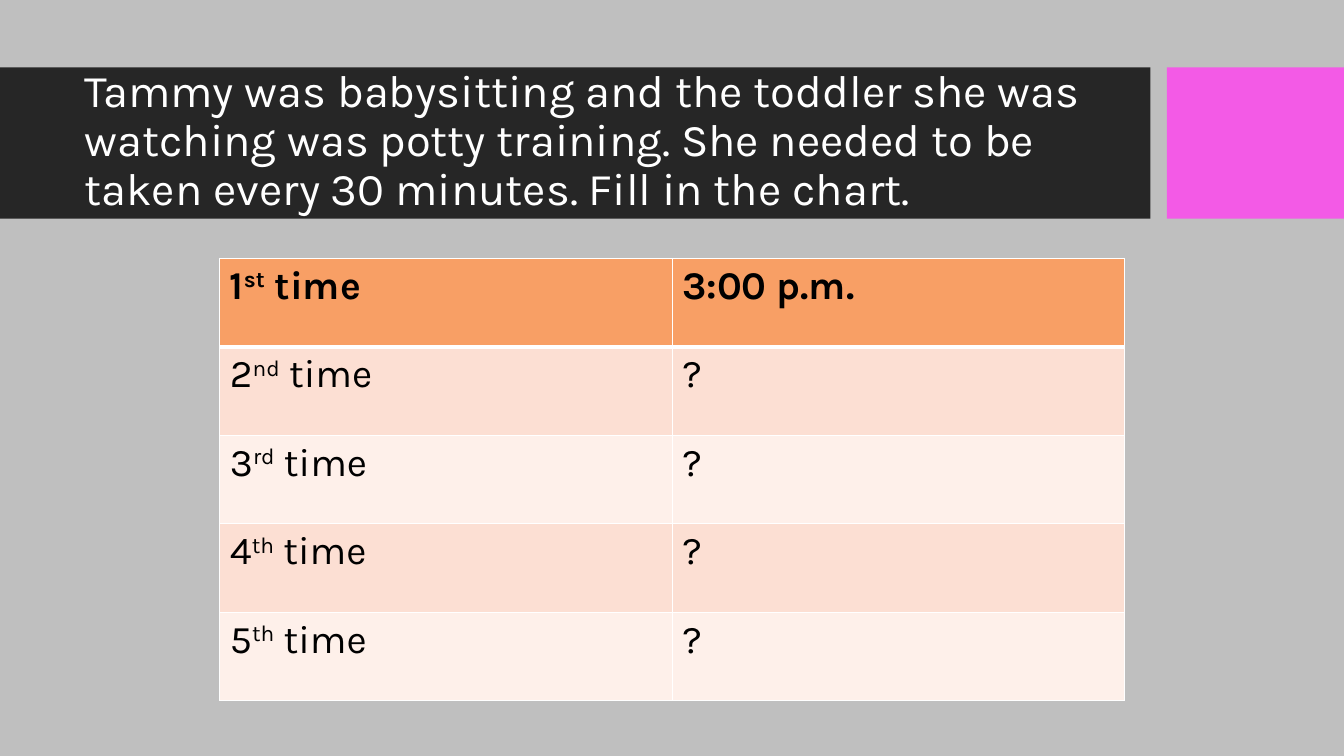
from lxml.etree import SubElement
from pptx import Presentation
from pptx.dml.color import RGBColor
from pptx.enum.shapes import MSO_SHAPE as Shape
from pptx.enum.text import MSO_ANCHOR as Anchor
from pptx.oxml.ns import qn
from pptx.util import Cm, Pt

FONT = "Karla"
COLORS = {
    "background": "BFBFBF",
    "banner": "262626",
    "accent": "F35AE6",
    "header": "F89F65",
    "dark_band": "FCDFD3",
    "light_band": "FEF0EA",
    "white": "FFFFFF",
    "black": "000000",
}
QUESTION = (
    "Tammy was babysitting and the toddler she was watching was potty training. "
    "She needed to be taken every 30 minutes. Fill in the chart."
)
# Number, ordinal ending and clock time of each visit
VISITS = [
    ("1", "st", "3:00 p.m."),
    ("2", "nd", "?"),
    ("3", "rd", "?"),
    ("4", "th", "?"),
    ("5", "th", "?"),
]


def color(name):
    return RGBColor.from_string(COLORS[name])


def add_run(paragraph, text, size, color_name, bold=False, raised=False):
    run = paragraph.add_run()
    run.text = text
    run.font.name = FONT
    run.font.size = Pt(size)
    run.font.bold = bold
    run.font.color.rgb = color(color_name)
    if raised:
        run.font._element.set("baseline", "30000")


def add_block(slide, left, width, color_name):
    shape = slide.shapes.add_shape(Shape.RECTANGLE, Cm(left), Cm(1.7), Cm(width), Cm(3.81))
    shape.shadow.inherit = False
    shape.fill.solid()
    shape.fill.fore_color.rgb = color(color_name)
    shape.line.fill.background()


def add_question(slide):
    box = slide.shapes.add_textbox(Cm(1.88), Cm(2.08), Cm(26.7), Cm(3))
    frame = box.text_frame
    frame.word_wrap = True
    frame.vertical_anchor = Anchor.MIDDLE
    paragraph = frame.paragraphs[0]
    paragraph.line_spacing = 0.9
    add_run(paragraph, QUESTION, 32.4, "white")


def set_borders(cell, top, bottom):
    properties = cell._tc.get_or_add_tcPr()
    for side, width in (("L", 1), ("R", 1), ("T", top), ("B", bottom)):
        line = SubElement(properties, qn(f"a:ln{side}"), w=str(Pt(width)))
        fill = SubElement(line, qn("a:solidFill"))
        SubElement(fill, qn("a:srgbClr"), val=COLORS["white"])


def add_visit_table(slide):
    frame = slide.shapes.add_table(len(VISITS), 2, Cm(5.54), Cm(6.51), Cm(22.8), Cm(11.15))
    table = frame.table
    for row, (number, ending, time) in enumerate(VISITS):
        is_header = row == 0
        band = "header" if is_header else "dark_band" if row % 2 else "light_band"
        for cell in table.rows[row].cells:
            # The rule under the header is thicker than the others
            set_borders(cell, 3 if row == 1 else 1, 3 if is_header else 1)
            cell.fill.solid()
            cell.fill.fore_color.rgb = color(band)
        visit, clock = (cell.text_frame.paragraphs[0] for cell in table.rows[row].cells)
        add_run(visit, number, 28, "black", is_header)
        add_run(visit, ending, 28, "black", is_header, raised=True)
        add_run(visit, " time", 28, "black", is_header)
        add_run(clock, time, 28, "black", is_header)


def main():
    presentation = Presentation()
    presentation.slide_width = Cm(33.87)
    presentation.slide_height = Cm(19.05)
    slide = presentation.slides.add_slide(presentation.slide_layouts[6])
    slide.background.fill.solid()
    slide.background.fill.fore_color.rgb = color("background")

    # Title banner
    add_block(slide, 0, 28.99, "banner")
    add_block(slide, 29.41, 4.46, "accent")
    add_question(slide)

    # Chart to fill in
    add_visit_table(slide)

    presentation.save("out.pptx")


if __name__ == "__main__":
    main()
